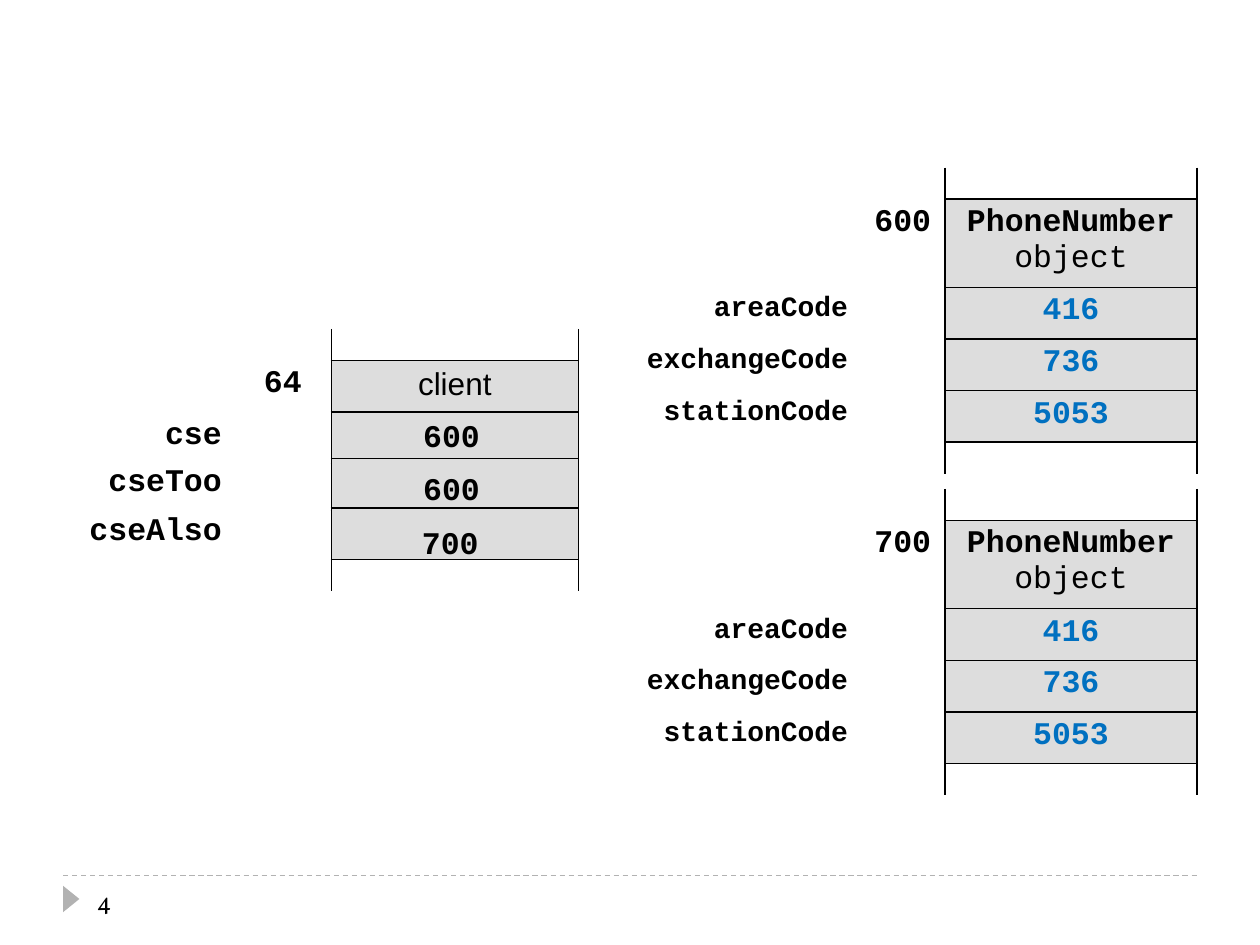
from lxml import etree
from pptx import Presentation
from pptx import util as u
from pptx.dml.color import RGBColor
from pptx.enum import dml, shapes, text
from pptx.oxml.ns import qn

BLACK = RGBColor(0x00, 0x00, 0x00)
BLUE = RGBColor(0x00, 0x70, 0xC0)
CELL_GRAY = RGBColor(0xDD, 0xDD, 0xDD)
FOOTER_GRAY = RGBColor(0xB2, 0xB2, 0xB2)
MONO = "Courier New"
NO_STYLE = "{2D5ABB26-0587-4C30-8999-92F81FD0307C}"
LEFT, CENTER, RIGHT = text.PP_ALIGN.LEFT, text.PP_ALIGN.CENTER, text.PP_ALIGN.RIGHT
EDGE_H, ROW_H, HEADER_H = 0.25, 0.41, 0.67


def style(p, size=18, bold=True, color=BLACK, font=MONO, align=CENTER):
    p.alignment = align
    for r in p.runs:
        f = r.font
        f.name, f.size, f.bold = font, u.Pt(size), bold
        f.color.rgb = color


def add_label(s, x, y, w, h, value, wrap=True, **look):
    tf = s.shapes.add_textbox(u.Inches(x), u.Inches(y), u.Inches(w), u.Inches(h)).text_frame
    tf.word_wrap = wrap
    tf.vertical_anchor = text.MSO_ANCHOR.MIDDLE
    tf.text = value
    style(tf.paragraphs[0], align=LEFT, **look)


def set_borders(cell, sides):
    tc_pr = cell._tc.get_or_add_tcPr()
    for side in "LRTB":
        ln = etree.SubElement(tc_pr, qn("a:ln" + side), w=str(u.Pt(1)))
        if side in sides:
            fill = etree.SubElement(ln, qn("a:solidFill"))
            etree.SubElement(fill, qn("a:srgbClr"), val=str(BLACK))
        else:
            etree.SubElement(ln, qn("a:noFill"))


def add_memory(s, x, y, widths, rows, open_top=True):
    """Rows are (height, name, address, value, name size, value look)."""
    blank = (EDGE_H, "", "", "", 18, {})
    rows = [blank] * open_top + rows + [blank]
    frame = s.shapes.add_table(len(rows), 3, u.Inches(x), u.Inches(y),
                               u.Inches(sum(widths)), u.Inches(sum(r[0] for r in rows)))
    table = frame.table
    table.first_row = table.horz_banding = False
    table._tbl.tblPr.find(qn("a:tableStyleId")).text = NO_STYLE
    for column, width in zip(table.columns, widths):
        column.width = u.Inches(width)

    for i, (height, name, address, value, name_size, look) in enumerate(rows):
        table.rows[i].height = u.Inches(height)
        last = i == len(rows) - 1
        is_open = last or (open_top and i == 0)
        value_sides = "LRTB" if not is_open else "LRT" if last else "LRB"
        for j, (content, sides) in enumerate(((name, ""), (address, "R"), (value, value_sides))):
            cell = table.cell(i, j)
            set_borders(cell, sides)
            if j == 2 and not is_open:
                cell.fill.solid()
                cell.fill.fore_color.rgb = CELL_GRAY
            else:
                cell.fill.background()
            cell.text_frame.text = content
            for k, p in enumerate(cell.text_frame.paragraphs):
                if not content:
                    p.font.size = u.Pt(8)
                elif j == 0:
                    style(p, size=name_size, align=RIGHT)
                elif j == 1:
                    style(p)
                else:
                    style(p, **{"bold": k == 0, **look})


def add_client(s, x, y):
    widths = (1.28, 0.77, 1.96)

    def variable(name):
        return (ROW_H, name, "", "", 18, {})

    header = (ROW_H, "", "64", "client", 18, {"font": "Arial", "bold": False})
    add_memory(s, x, y, widths, [header, variable("cse")])
    # Later variables overlap the open end of the table above
    for name, dy in (("cseToo", 1.03), ("cseAlso", 1.42)):
        add_memory(s, x, y + dy, widths, [variable(name)], open_top=False)
    # References held by the variables
    for value, dx, dy in (("600", 2.68, 0.64), ("600", 2.68, 1.06), ("700", 2.67, 1.49)):
        add_label(s, x + dx, y + dy, 0.65, 0.4, value, wrap=False)


def add_phone_number(s, x, y, address):
    fields = (("areaCode", "416"), ("exchangeCode", "736"), ("stationCode", "5053"))
    rows = [(HEADER_H, "", address, "PhoneNumber\nobject", 18, {})]
    rows += [(ROW_H, name, "", value, 16, {"color": BLUE}) for name, value in fields]
    add_memory(s, x, y, (1.83, 0.67, 2), rows)


def add_footer(s, x, y, w):
    # Dashed rule
    rule = s.shapes.add_connector(shapes.MSO_CONNECTOR.STRAIGHT, u.Inches(x), u.Inches(y),
                                  u.Inches(x + w), u.Inches(y))
    rule.line.color.rgb = FOOTER_GRAY
    rule.line.width = u.Pt(0.75)
    rule.line.dash_style = dml.MSO_LINE.DASH
    etree.SubElement(rule._element.spPr, qn("a:effectLst"))
    # Page marker and number
    sp = s.shapes.add_shape(shapes.MSO_SHAPE.ISOSCELES_TRIANGLE, u.Inches(x - 0.04),
                            u.Inches(y + 0.12), u.Inches(0.21), u.Inches(0.13))
    sp.rotation = 90
    sp.shadow.inherit = False
    sp.fill.solid()
    sp.fill.fore_color.rgb = FOOTER_GRAY
    sp.line.fill.background()
    add_label(s, x + 0.17, y, 2.17, 0.4, "4", size=14, bold=False, font="Vollkorn")


def main():
    prs = Presentation()
    prs.slide_width, prs.slide_height = u.Inches(10), u.Inches(7.5)
    s = prs.slides.add_slide(prs.slide_layouts[6])
    add_footer(s, 0.5, 6.95, 9)
    add_client(s, 0.58, 2.61)
    add_phone_number(s, 5, 1.33, "600")
    add_phone_number(s, 5, 3.88, "700")
    prs.save("out.pptx")


if __name__ == "__main__":
    main()
